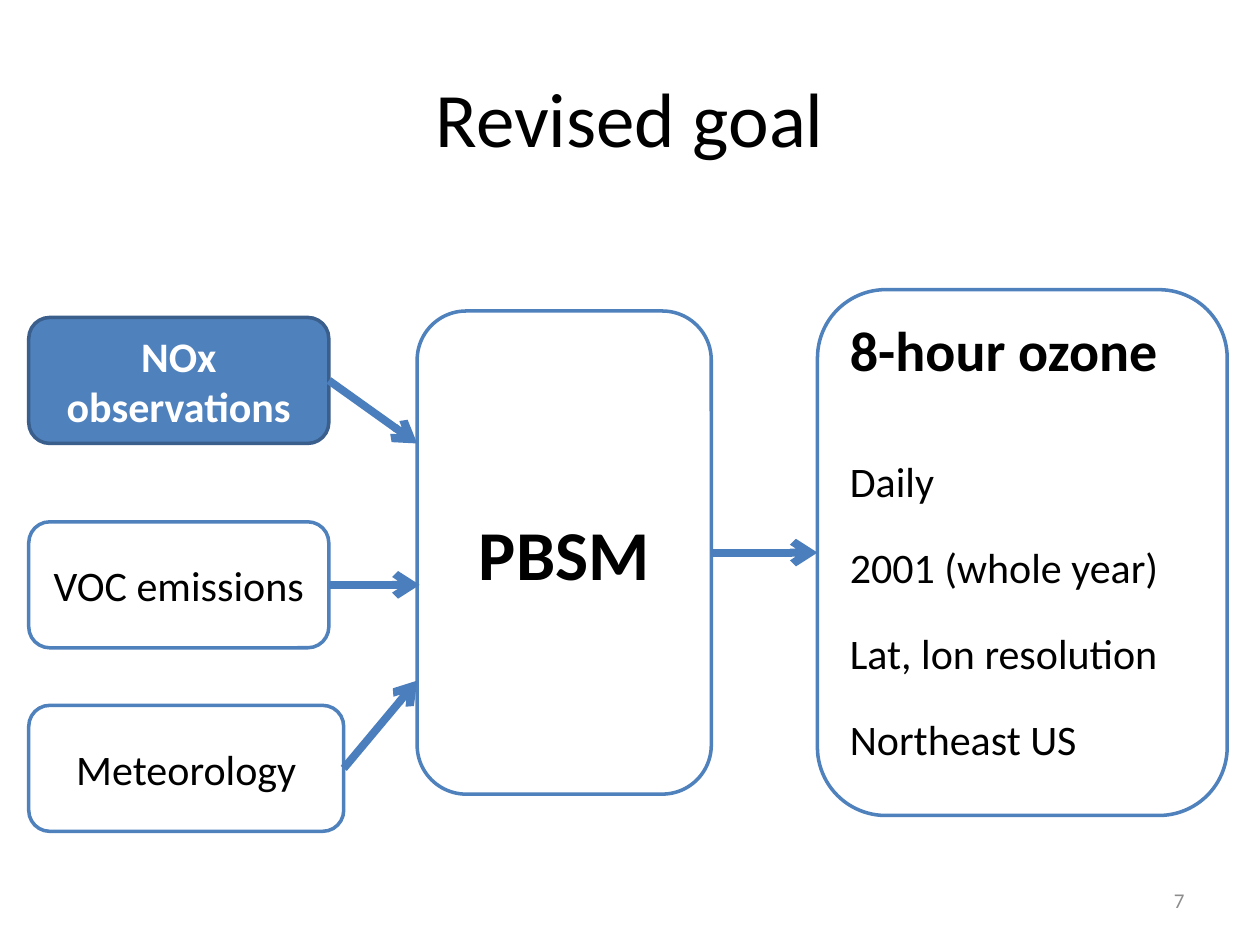
from lxml import etree
from pptx import Presentation
from pptx.dml.color import RGBColor
from pptx.enum.shapes import MSO_CONNECTOR, MSO_SHAPE
from pptx.enum.text import MSO_ANCHOR, PP_ALIGN
from pptx.oxml.ns import qn
from pptx.util import Cm, Pt

BLACK = RGBColor(0x00, 0x00, 0x00)
WHITE = RGBColor(0xFF, 0xFF, 0xFF)
BLUE = RGBColor(0x4F, 0x81, 0xBD)
DARK_BLUE = RGBColor(0x3A, 0x5F, 0x8C)
ARROW_BLUE = RGBColor(0x4B, 0x7E, 0xBC)
GREY = RGBColor(0x8C, 0x8C, 0x8C)
ROUNDED = MSO_SHAPE.ROUNDED_RECTANGLE
STRAIGHT = MSO_CONNECTOR.STRAIGHT
MIDDLE, TOP = MSO_ANCHOR.MIDDLE, MSO_ANCHOR.TOP
CENTER, LEFT, RIGHT = PP_ALIGN.CENTER, PP_ALIGN.LEFT, PP_ALIGN.RIGHT
LEFT_SIDE, RIGHT_SIDE = 1, 3
FONT = "Calibri"
INPUT_LEFT, INPUT_WIDTH, INPUT_HEIGHT = 0.58, 6.05, 2.54
OZONE_DETAILS = ["Daily", "2001 (whole year)", "Lat, lon resolution", "Northeast US"]


def format_para(para, size, color=BLACK, bold=False, align=CENTER):
    """Align a paragraph and set the font of its runs."""
    para.alignment = align
    for span in para.runs:
        span.font.name = FONT
        span.font.size = Pt(size)
        span.font.bold = bold
        span.font.color.rgb = color


def set_title(page, text):
    """Fill and place the title placeholder."""
    title = page.shapes.title
    title.left, title.top, title.width, title.height = Cm(1.27), Cm(0.76), Cm(22.86), Cm(3.18)
    title.text_frame.text = text
    title.text_frame.vertical_anchor = MIDDLE
    format_para(title.text_frame.paragraphs[0], 44)


def add_box(page, bounds, text, size=24, bold=False, fill=WHITE, line=BLUE, color=BLACK):
    """Add a rounded box with one centred label."""
    box = page.shapes.add_shape(ROUNDED, *map(Cm, bounds))
    box.shadow.inherit = False
    box.fill.solid()
    box.fill.fore_color.rgb = fill
    box.line.color.rgb = line
    box.line.width = Pt(2)
    box.text_frame.text = text
    box.text_frame.word_wrap = True
    box.text_frame.vertical_anchor = MIDDLE
    format_para(box.text_frame.paragraphs[0], size, color, bold)
    return box


def add_details(box, details):
    """Turn a box into a left-aligned heading with spaced lines below."""
    frame = box.text_frame
    frame.vertical_anchor = TOP
    heading = frame.paragraphs[0]
    heading.alignment = LEFT
    heading.space_after = Pt(21)
    for detail in details:
        para = frame.add_paragraph()
        para.text = detail
        para.line_spacing = 1.5
        para.space_before = Pt(6)
        format_para(para, 24, align=LEFT)


def add_arrow(page, source, end):
    """Add an arrow from the right side of a box to a point."""
    arrow = page.shapes.add_connector(STRAIGHT, Cm(0), Cm(0), *map(Cm, end))
    arrow.begin_connect(source, RIGHT_SIDE)
    arrow.line.color.rgb = ARROW_BLUE
    arrow.line.width = Pt(4.5)
    etree.SubElement(arrow.line._get_or_add_ln(), qn("a:tailEnd"), type="arrow")
    etree.SubElement(arrow._element.spPr, qn("a:effectLst"))
    return arrow


def add_page_number(page, number):
    """Add the page number at the lower right."""
    box = page.shapes.add_textbox(Cm(18.2), Cm(17.65), Cm(5.93), Cm(1.01))
    frame = box.text_frame
    frame.word_wrap = True
    frame.vertical_anchor = MIDDLE
    frame.text = number
    format_para(frame.paragraphs[0], 12, GREY, align=RIGHT)


def main():
    """Build the slide and save the deck."""
    deck = Presentation()
    deck.slide_width, deck.slide_height = Cm(25.4), Cm(19.05)
    page = deck.slides.add_slide(deck.slide_layouts[5])
    set_title(page, "Revised goal")

    emissions = add_box(page, (INPUT_LEFT, 10.52, INPUT_WIDTH, INPUT_HEIGHT), "VOC emissions")
    observations = add_box(page, (INPUT_LEFT, 6.4, INPUT_WIDTH, INPUT_HEIGHT), "NOx observations",
                           bold=True, fill=BLUE, line=DARK_BLUE, color=WHITE)
    meteorology = add_box(page, (INPUT_LEFT, 14.22, 6.35, INPUT_HEIGHT), "Meteorology")
    model = add_box(page, (8.41, 6.27, 5.93, 9.74), "PBSM", size=40, bold=True)
    ozone = add_box(page, (16.48, 5.84, 8.26, 10.6), "8-hour ozone", size=32, bold=True)
    add_details(ozone, OZONE_DETAILS)

    add_arrow(page, observations, (8.41, 8.94))
    add_arrow(page, emissions, (8.46, 11.79))
    add_arrow(page, model, (16.48, 11.14)).end_connect(ozone, LEFT_SIDE)
    add_arrow(page, meteorology, (8.41, 13.72))
    add_page_number(page, "7")
    deck.save("out.pptx")


if __name__ == "__main__":
    main()
